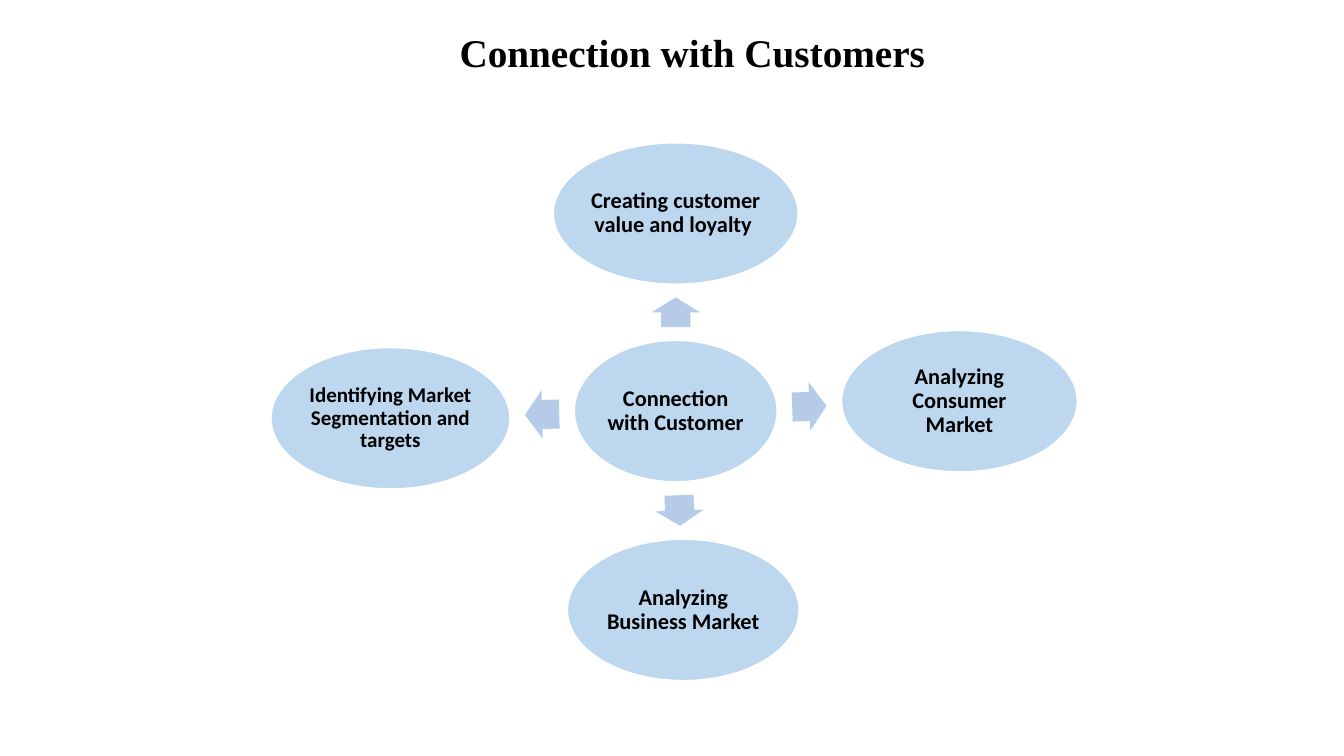
from math import atan2, cos, degrees, hypot, sin
from pptx import Presentation
from pptx.dml.color import RGBColor
from pptx.enum.shapes import MSO_SHAPE as Shape
from pptx.enum.text import MSO_ANCHOR as Anchor, PP_ALIGN as Align
from pptx.util import Cm, Pt

# Content: text, centre x, centre y, width (cm), text size (pt)
TITLE = "Connection with Customers"
HUB = ("Connection with Customer", 17.03, 10.36, 5.11, 16)
NODES = [
    ("Creating customer value and loyalty ", 17.03, 5.38, 6.17, 16),
    ("Analyzing Consumer Market", 24.18, 10.11, 5.94, 16),
    ("Analyzing Business Market", 17.22, 15.37, 5.84, 16),
    ("Identifying Market Segmentation and targets", 9.84, 10.54, 6.02, 15),
]

# Format
TALL = 3.56        # height of every ellipse
ARROW_TALL = 1.22
SHARE = 0.53       # part of the gap that an arrow fills
INK, WHITE, OVAL, ARROW = "000000", "FFFFFF", "BDD7EE", "B5CBE7"
FRAME = {"word_wrap": True, "vertical_anchor": Anchor.MIDDLE}
PARA = {"alignment": Align.CENTER, "line_spacing": 0.9}
INSETS = ("margin_left", "margin_right", "margin_top", "margin_bottom")


def color(code):
    return RGBColor.from_string(code)


def apply(item, values):
    for key, value in values.items():
        setattr(item, key, value)


def write(shape, text, size, font):
    frame = shape.text_frame
    apply(frame, FRAME)
    para = frame.paragraphs[0]
    apply(para, PARA)
    run = para.add_run()
    run.text = text
    apply(run.font, {"name": font, "size": Pt(size), "bold": True})
    run.font.color.rgb = color(INK)


def place(slide, kind, x, y, wide, tall, fill):
    """Add a filled shape around its centre."""
    box = (x - wide / 2, y - tall / 2, wide, tall)
    shape = slide.shapes.add_shape(kind, *map(Cm, box))
    shape.shadow.inherit = False
    shape.fill.solid()
    shape.fill.fore_color.rgb = color(fill)
    return shape


def add_oval(slide, node):
    text, x, y, wide, size = node
    oval = place(slide, Shape.OVAL, x, y, wide, TALL, OVAL)
    oval.line.color.rgb = color(WHITE)
    oval.line.width = Pt(1)
    apply(oval.text_frame, dict.fromkeys(INSETS, Cm(0.05)))
    write(oval, text, size, "Calibri")


def reach(wide, turn):
    """Distance from an ellipse's centre to its edge in one direction."""
    a, b = wide / 2, TALL / 2
    return a * b / hypot(b * cos(turn), a * sin(turn))


def add_arrow(slide, start, end):
    x, y, wide = start[1:4]
    dx, dy = end[1] - x, end[2] - y
    turn = atan2(dy, dx)
    near = reach(wide, turn)
    far = hypot(dx, dy) - reach(end[3], turn)
    mid = (near + far) / 2
    arrow = place(slide, Shape.RIGHT_ARROW, x + mid * cos(turn),
                  y + mid * sin(turn), SHARE * (far - near), ARROW_TALL, ARROW)
    arrow.line.fill.background()
    arrow.adjustments[0], arrow.adjustments[1] = 0.6, 0.5
    arrow.rotation = degrees(turn) % 360


def main():
    deck = Presentation()
    apply(deck, {"slide_width": Cm(33.87), "slide_height": Cm(19.05)})
    slide = deck.slides.add_slide(deck.slide_layouts[6])

    # Title
    box = slide.shapes.add_textbox(*map(Cm, (2.84, 0.61, 29.21, 1.55)))
    write(box, TITLE, 28, "Times New Roman")

    # Hub with its four branches
    add_oval(slide, HUB)
    for node in NODES:
        add_arrow(slide, HUB, node)
        add_oval(slide, node)

    deck.save("out.pptx")


if __name__ == "__main__":
    main()
